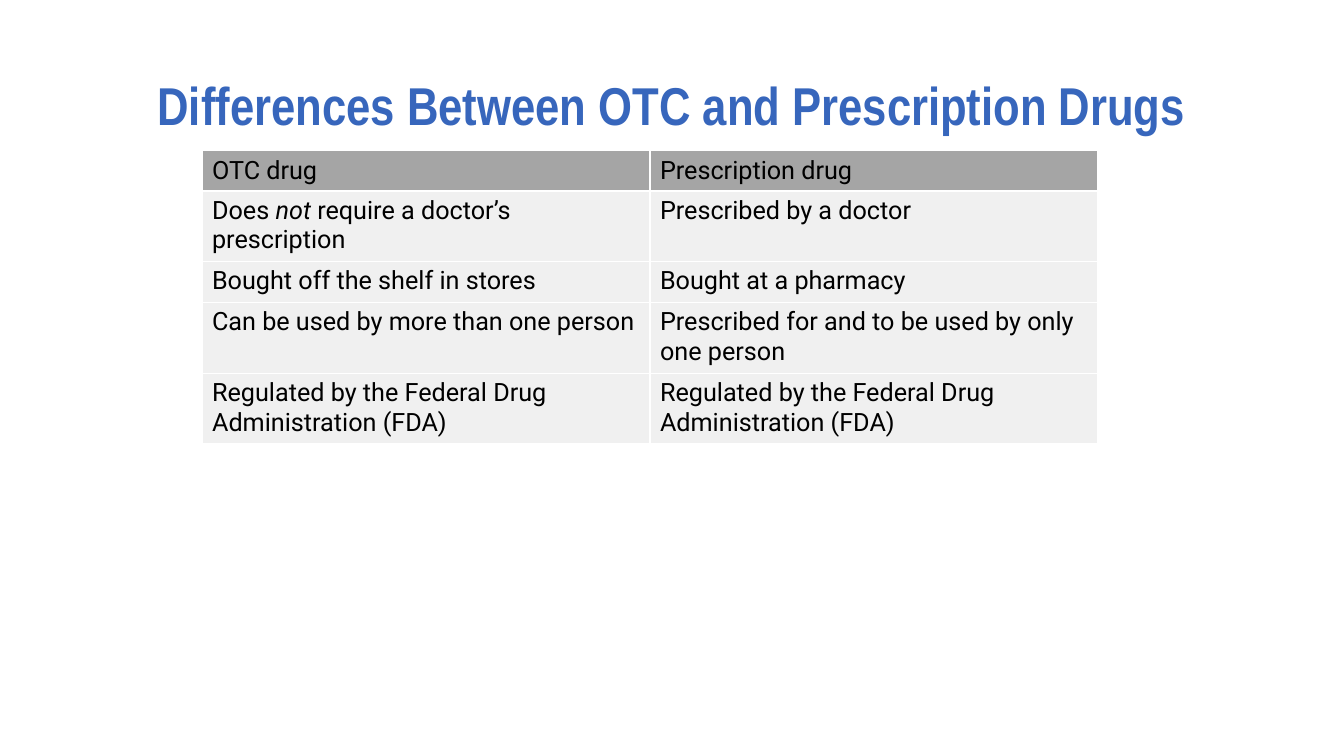
from lxml import etree
from pptx import Presentation
from pptx.dml.color import RGBColor
from pptx.enum.text import MSO_ANCHOR, PP_ALIGN
from pptx.oxml.ns import qn
from pptx.util import Pt

MIDDLE, BOTTOM, TOP = MSO_ANCHOR.MIDDLE, MSO_ANCHOR.BOTTOM, MSO_ANCHOR.TOP
LEFT, CENTER = PP_ALIGN.LEFT, PP_ALIGN.CENTER

BLUE = RGBColor(0x37, 0x66, 0xBC)
BLACK = RGBColor(0, 0, 0)
WHITE = RGBColor(0xFF, 0xFF, 0xFF)
GRAY = RGBColor(0xA5, 0xA5, 0xA5)
PALE = RGBColor(0xF0, 0xF0, 0xF0)

WIDTH, HEIGHT = 1344, 756
SCALE = 12192000 / WIDTH

TITLE = "Differences Between OTC and Prescription Drugs"
# Text between asterisks is italic
ROWS = [
    ("OTC drug", "Prescription drug"),
    ("Does *not* require a doctor’s prescription", "Prescribed by a doctor"),
    ("Bought off the shelf in stores", "Bought at a pharmacy"),
    ("Can be used by more than one person",
     "Prescribed for and to be used by only one person"),
    ("Regulated by the Federal Drug Administration (FDA)",) * 2,
]


def px(n):
    return round(n * SCALE)


def write(frame, text, size=18, font="Roboto", color=BLACK, bold=False,
          align=LEFT, spacing=None):
    para = frame.paragraphs[0]
    para.alignment = align
    para.line_spacing = spacing
    for i, part in enumerate(text.split("*")):
        run = para.add_run()
        run.text = part
        run.font.size = Pt(size)
        run.font.name = font
        run.font.bold = bold
        run.font.italic = i % 2 == 1
        run.font.color.rgb = color


def add_title(slide, text):
    box = slide.shapes.add_textbox(px(0), px(61), px(WIDTH), px(94))
    frame = box.text_frame
    frame.word_wrap = True
    frame.vertical_anchor = MIDDLE
    frame.margin_left = frame.margin_right = 0
    frame.margin_top = frame.margin_bottom = 0
    write(frame, text, size=38, font="Arial Narrow", color=BLUE, bold=True,
          align=CENTER, spacing=0.9)


def add_border(cell, color, width):
    props = cell._tc.get_or_add_tcPr()
    for side in ("lnL", "lnR", "lnT", "lnB"):
        line = etree.SubElement(props, qn("a:" + side), w=str(Pt(width)))
        fill = etree.SubElement(line, qn("a:solidFill"))
        etree.SubElement(fill, qn("a:srgbClr"), val=str(color))


def add_grid(slide, rows):
    cols = len(rows[0])
    shape = slide.shapes.add_table(len(rows), cols, px(202), px(150),
                                   px(448 * cols), px(41 * len(rows)))
    table = shape.table
    table.first_row = table.horz_banding = False
    for r, texts in enumerate(rows):
        table.rows[r].height = px(41)
        for c, text in enumerate(texts):
            cell = table.cell(r, c)
            add_border(cell, WHITE, 1)
            cell.fill.solid()
            cell.fill.fore_color.rgb = PALE if r else GRAY
            cell.vertical_anchor = TOP if r else BOTTOM
            write(cell.text_frame, text)


def main():
    deck = Presentation()
    deck.slide_width, deck.slide_height = px(WIDTH), px(HEIGHT)
    slide = deck.slides.add_slide(deck.slide_layouts[6])

    # Heading
    add_title(slide, TITLE)

    # Comparison table
    add_grid(slide, ROWS)

    deck.save("out.pptx")


if __name__ == "__main__":
    main()
